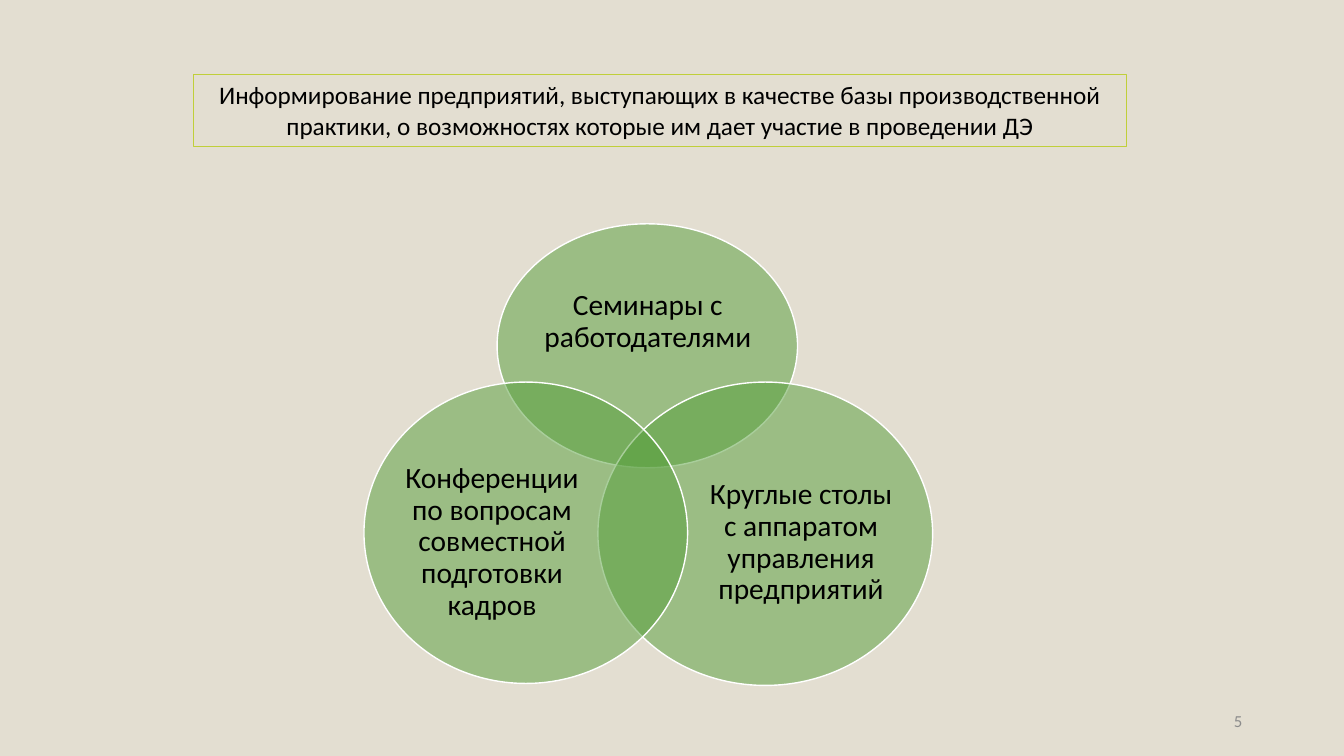
"""Build a slide with a framed heading above a three-circle Venn diagram."""
from lxml.etree import SubElement
from pptx import Presentation
from pptx.dml.color import RGBColor
from pptx.enum.shapes import MSO_SHAPE as Preset
from pptx.enum.text import MSO_ANCHOR as Anchor, MSO_AUTO_SIZE as AutoSize, PP_ALIGN as Align
from pptx.oxml.ns import qn
from pptx.util import Inches, Pt

BEIGE = RGBColor(0xE3, 0xDE, 0xD1)
LIME = RGBColor(0xC0, 0xCF, 0x3A)
GREEN = RGBColor(0x54, 0x9E, 0x39)
GREY = RGBColor(0x8C, 0x8C, 0x8C)
WHITE = RGBColor(0xFF, 0xFF, 0xFF)
BLACK = RGBColor(0, 0, 0)

HEADING = ("Информирование предприятий, выступающих в качестве базы производственной "
           "практики, о возможностях которые им дает участие в проведении ДЭ")
VENN = [
    ("Семинары с работодателями", (4.93, 2.22, 2.98, 2.42), (5.33, 2.65, 2.19, 1.09)),
    ("Круглые столы с аппаратом управления предприятий",
     (5.93, 3.79, 3.32, 3.01), (6.95, 4.56, 1.99, 1.65)),
    ("Конференции по вопросам совместной подготовки кадров",
     (3.61, 3.79, 3.21, 2.99), (3.92, 4.56, 1.92, 1.64)),
]


def write(holder, text, size, color=BLACK, align=Align.CENTER, anchor=Anchor.MIDDLE,
          spacing=1.0, inset=(0.1, 0.05)):
    frame = holder.text_frame
    frame.text = text
    frame.word_wrap = True
    frame.auto_size = AutoSize.NONE
    frame.vertical_anchor = anchor
    frame.margin_left = frame.margin_right = Inches(inset[0])
    frame.margin_top = frame.margin_bottom = Inches(inset[1])
    paragraph = frame.paragraphs[0]
    paragraph.alignment = align
    paragraph.line_spacing = spacing
    font = paragraph.runs[0].font
    font.name = "Calibri"
    font.size = Pt(size)
    font.color.rgb = color


def add_heading(slide):
    heading = slide.shapes.title
    heading.left, heading.top = Inches(1.92), Inches(0.74)
    heading.width, heading.height = Inches(9.25), Inches(0.71)
    heading.line.color.rgb = LIME
    heading.line.width = Pt(0.75)
    write(heading, HEADING, 18, anchor=Anchor.TOP)


def add_circle(venn, box):
    circle = venn.shapes.add_shape(Preset.OVAL, *map(Inches, box))
    circle.shadow.inherit = False
    circle.fill.solid()
    circle.fill.fore_color.rgb = GREEN
    tint = circle.fill._xPr.find(qn("a:solidFill"))[0]
    SubElement(tint, qn("a:alpha"), val="50000")
    circle.line.color.rgb = WHITE
    circle.line.width = Pt(1)


def add_label(parent, box, text, size, **text_format):
    label = parent.shapes.add_textbox(*map(Inches, box))
    write(label, text, size, **text_format)


def main():
    deck = Presentation()
    deck.slide_width, deck.slide_height = Inches(13.33), Inches(7.5)
    slide = deck.slides.add_slide(deck.slide_layouts.get_by_name("Title Only"))
    slide.background.fill.solid()
    slide.background.fill.fore_color.rgb = BEIGE

    add_heading(slide)
    venn = slide.shapes.add_group_shape()
    for text, circle_box, label_box in VENN:
        add_circle(venn, circle_box)
        add_label(venn, label_box, text, 21, spacing=0.9, inset=(0, 0))
    add_label(slide, (9.42, 6.95, 3, 0.4), "5", 12, color=GREY, align=Align.RIGHT)
    deck.save("out.pptx")


if __name__ == "__main__":
    main()
